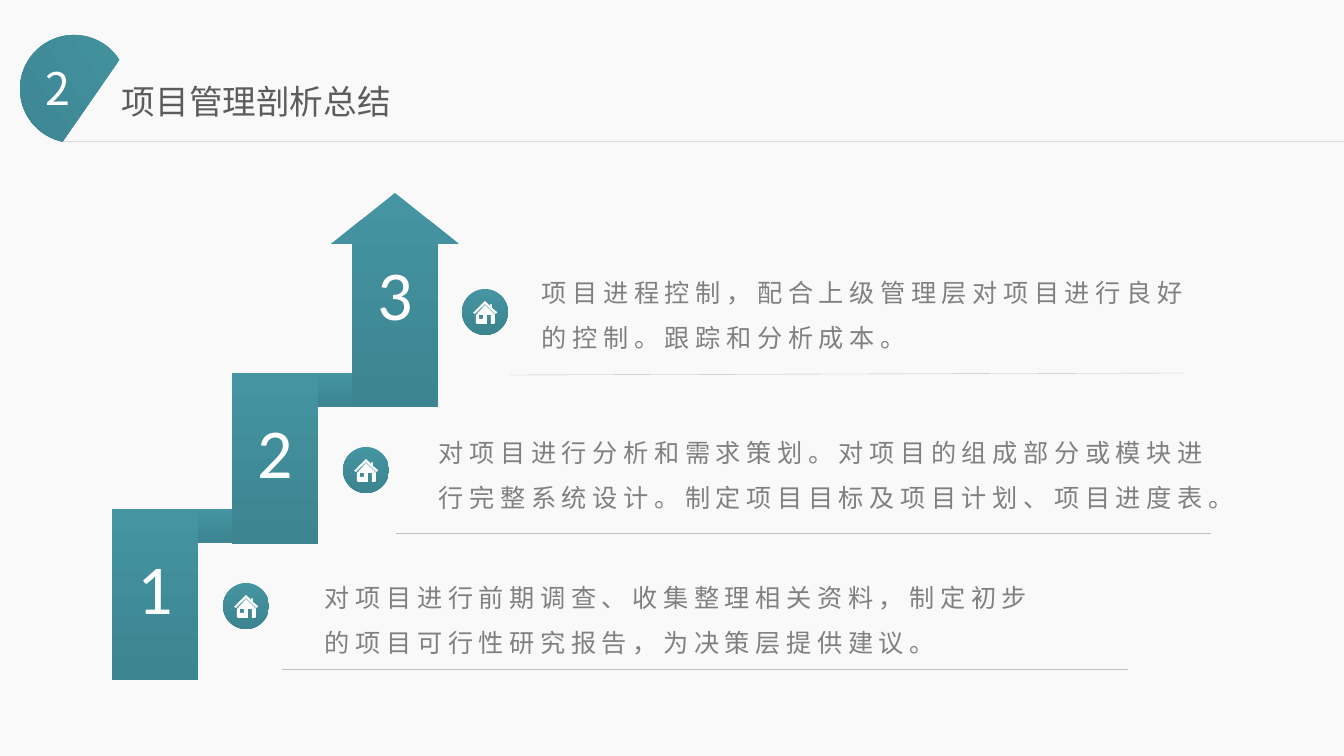
from dataclasses import dataclass
from lxml import etree
from pptx import Presentation
from pptx.dml.color import RGBColor
from pptx.enum.shapes import MSO_CONNECTOR, MSO_SHAPE
from pptx.enum.text import MSO_ANCHOR, MSO_AUTO_SIZE, PP_ALIGN
from pptx.oxml.ns import qn
from pptx.util import Emu, Pt

RECT, OVAL, CHORD = MSO_SHAPE.RECTANGLE, MSO_SHAPE.OVAL, MSO_SHAPE.CHORD
LINE = MSO_CONNECTOR.STRAIGHT
CENTER, MIDDLE = PP_ALIGN.CENTER, MSO_ANCHOR.MIDDLE
GROW = MSO_AUTO_SIZE.SHAPE_TO_FIT_TEXT
WIDE, HIGH = 1344, 756
SCALE = 12192000 / WIDE


@dataclass(frozen=True)
class Theme:
    back: str = "F9F9F9"
    light: str = "4594A1"
    dark: str = "3C8591"
    white: str = "FFFFFF"
    title: str = "5C5C5C"
    body: str = "808080"
    rule: str = "BFBFBF"
    head: str = "D9D9D9"
    cjk: str = "Noto Sans CJK JP"
    latin: str = "Calibri"
    small: int = 18
    mid: int = 24
    large: int = 32
    huge: int = 50


@dataclass(frozen=True)
class Box:
    x: int
    y: int
    w: int
    h: int


@dataclass(frozen=True)
class Rule:
    x1: int
    y1: int
    x2: int
    y2: int


@dataclass(frozen=True)
class Item:
    text: str
    area: Box
    icon: Box
    rule: Rule


THEME = Theme()
STEP = Box(112, 509, 86, 171)
LINK = 34
RISE = 136
ARROW = [(352, 407), (352, 244), (331, 244), (395, 193),
         (459, 244), (438, 244), (438, 407)]
HOUSE = [
    [(24, 12), (22, 13), (12, 3), (2, 13), (0, 12), (1, 11), (12, 0),
     (17, 5), (17, 4), (18, 3), (19, 4), (19, 7), (24, 11)],
    [(22, 14), (22, 22), (21, 23), (18, 23), (18, 14), (14, 14), (14, 23),
     (4, 23), (3, 22), (3, 14), (12, 4)],
    [(10, 14), (6, 14), (6, 18), (10, 18)],
]
ITEMS = [
    Item("对项目进行前期调查、收集整理相关资料，制定初步的项目可行性研究报告，为决策层提供建议。",
         Box(315, 562, 742, 97), Box(223, 583, 46, 46), Rule(282, 669, 1128, 669)),
    Item("对项目进行分析和需求策划。对项目的组成部分或模块进行完整系统设计。制定项目目标及项目计划、项目进度表。",
         Box(429, 417, 797, 97), Box(343, 447, 46, 46), Rule(396, 533, 1211, 533)),
    Item("项目进程控制，配合上级管理层对项目进行良好的控制。跟踪和分析成本。",
         Box(532, 257, 696, 97), Box(462, 289, 46, 46), Rule(510, 375, 1184, 373)),
]


def px(n: int) -> Emu:
    return Emu(round(n * SCALE))


def rgb(code: str) -> RGBColor:
    return RGBColor.from_string(code)


def frame(box: Box) -> tuple:
    return px(box.x), px(box.y), px(box.w), px(box.h)


def shade(shape) -> None:
    shape.shadow.inherit = False
    shape.line.fill.background()
    shape.fill.gradient()
    shape.fill.gradient_angle = 270
    for stop, code in zip(shape.fill.gradient_stops, (THEME.light, THEME.dark)):
        stop.color.rgb = rgb(code)


def block(slide, kind, box: Box):
    shape = slide.shapes.add_shape(kind, *frame(box))
    shade(shape)
    return shape


def outline(slide, loops: list, x: int = 0, y: int = 0):
    first, *rest = [[(x + a, y + b) for a, b in loop] for loop in loops]
    path = slide.shapes.build_freeform(*first[0], scale=SCALE)
    path.add_line_segments(first[1:], close=True)
    for loop in rest:
        path.move_to(*loop[0])
        path.add_line_segments(loop[1:], close=True)
    return path.convert_to_shape()


def style(para, face: str, size: int, code: str, gap: int = 0) -> None:
    font = para.font
    font.name, font.size = face, Pt(size)
    font.color.rgb = rgb(code)
    props = para._p.get_or_add_pPr().get_or_add_defRPr()
    etree.SubElement(props, qn("a:ea"), typeface=face)
    if gap:
        props.set("spc", str(gap * 100))


def label(slide, text: str, box: Box, size: int, code: str,
          gap: int = 0, lead: float = 1.0) -> None:
    body = slide.shapes.add_textbox(*frame(box)).text_frame
    body.word_wrap = True
    body.auto_size = GROW
    para = body.paragraphs[0]
    para.text = text
    para.line_spacing = lead
    style(para, THEME.cjk, size, code, gap)


def number(shape, text: str) -> None:
    body = shape.text_frame
    body.word_wrap = True
    body.vertical_anchor = MIDDLE
    para = body.paragraphs[0]
    para.text = text
    para.alignment = CENTER
    para.line_spacing = 0.8
    style(para, THEME.latin, THEME.huge, THEME.white)


def stroke(slide, rule: Rule, code: str, width: float) -> None:
    line = slide.shapes.add_connector(
        LINE, px(rule.x1), px(rule.y1), px(rule.x2), px(rule.y2))
    line.line.color.rgb = rgb(code)
    line.line.width = Pt(width)
    etree.SubElement(line._element.spPr, qn("a:effectLst"))


def header(slide) -> None:
    block(slide, CHORD, Box(20, 35, 108, 108)).rotation = 57.3
    stroke(slide, Rule(63, 141, WIDE, 141), THEME.head, 0.5)
    label(slide, "项目管理剖析总结", Box(112, 76, 422, 50), THEME.mid, THEME.title)
    label(slide, "2", Box(36, 56, 52, 65), THEME.large, THEME.white)


def stairs(slide) -> None:
    for i in range(2):
        x, y = STEP.x + i * (STEP.w + LINK), STEP.y - i * RISE
        block(slide, RECT, Box(x + STEP.w, y, LINK, LINK))
        number(block(slide, RECT, Box(x, y, STEP.w, STEP.h)), str(i + 1))
    arrow = outline(slide, [ARROW])
    shade(arrow)
    number(arrow, "3")


def entry(slide, item: Item) -> None:
    block(slide, OVAL, item.icon)
    house = outline(slide, HOUSE, item.icon.x + 11, item.icon.y + 12)
    house.shadow.inherit = False
    house.fill.solid()
    house.fill.fore_color.rgb = rgb(THEME.white)
    house.line.fill.background()
    stroke(slide, item.rule, THEME.rule, 0.25)
    label(slide, item.text, item.area, THEME.small, THEME.body, 4, 1.5)


def main() -> None:
    deck = Presentation()
    deck.slide_width, deck.slide_height = px(WIDE), px(HIGH)
    slide = deck.slides.add_slide(deck.slide_layouts[6])
    slide.background.fill.solid()
    slide.background.fill.fore_color.rgb = rgb(THEME.back)
    header(slide)
    stairs(slide)
    for item in ITEMS:
        entry(slide, item)
    deck.save("out.pptx")


if __name__ == "__main__":
    main()
